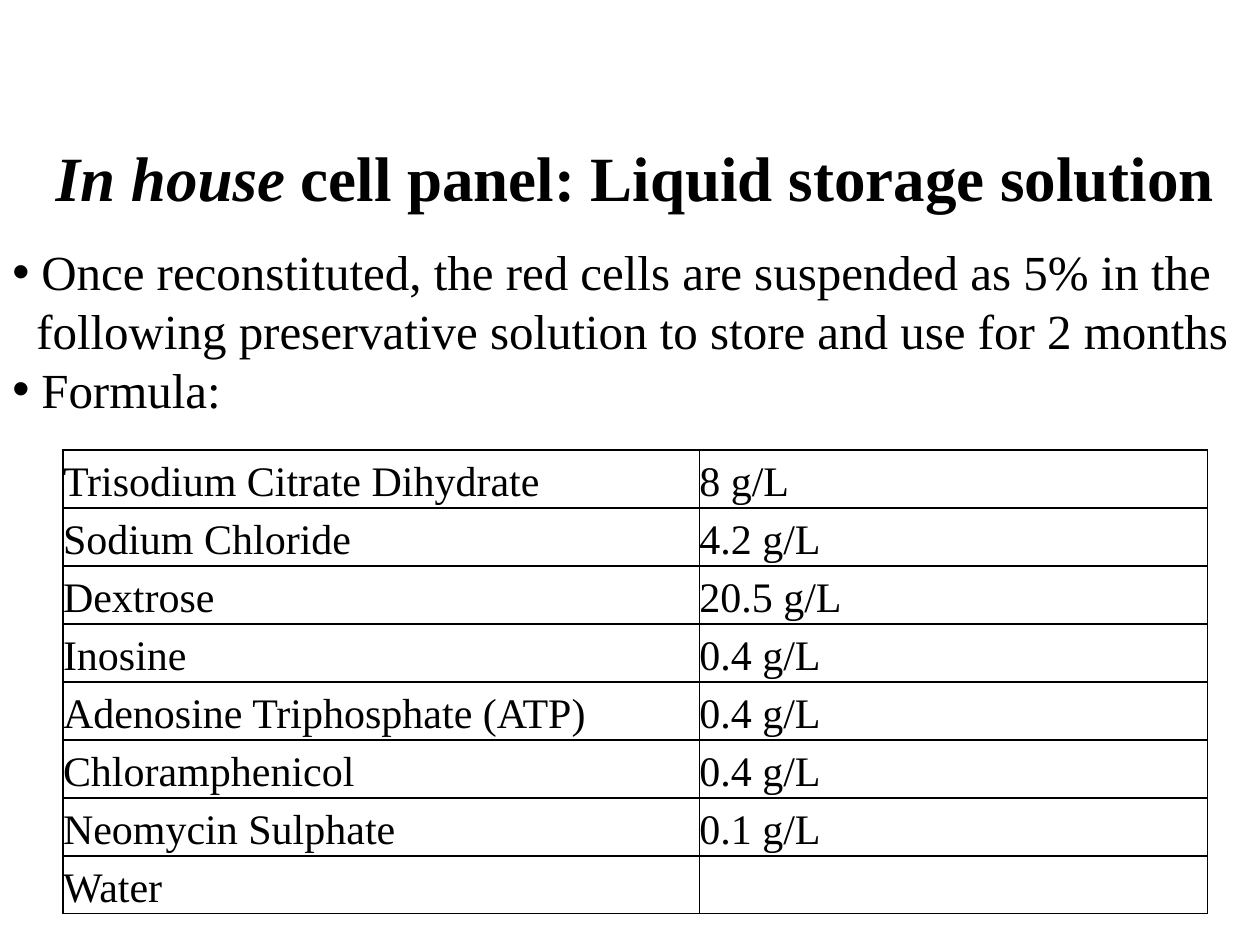
from lxml import etree
from pptx import Presentation
from pptx.dml.color import RGBColor
from pptx.enum.text import MSO_ANCHOR, PP_ALIGN
from pptx.oxml.ns import qn
from pptx.util import Inches, Pt

BLACK = RGBColor(0, 0, 0)
WHITE = RGBColor(255, 255, 255)
MIDDLE = MSO_ANCHOR.MIDDLE
TOP = MSO_ANCHOR.TOP
CENTER = PP_ALIGN.CENTER

FORMULA = [
    ("Trisodium Citrate Dihydrate", "8 g/L"),
    ("Sodium Chloride", "4.2 g/L"),
    ("Dextrose", "20.5 g/L"),
    ("Inosine", "0.4 g/L"),
    ("Adenosine Triphosphate (ATP)", "0.4 g/L"),
    ("Chloramphenicol", "0.4 g/L"),
    ("Neomycin Sulphate", "0.1 g/L"),
    ("Water", ""),
]


class PageBuilder:
    """Style and current page; lengths are in units of a 40 by 30 grid."""

    font = "Times New Roman"
    title_size, body_size, table_size = 36, 28, 24
    hanging, continuation = Inches(0.23), Inches(0.19)

    def __init__(self, deck):
        self.page = deck.slides.add_slide(deck.slide_layouts[6])
        self.unit = deck.slide_width / 40

    def grid(self, *lengths):
        return [round(length * self.unit) for length in lengths]

    def span(self, para, text, size, bold=False, italic=False):
        span = para.add_run()
        span.text = text
        font = span.font
        font.name, font.size = self.font, Pt(size)
        font.bold, font.italic = bold, italic
        font.color.rgb = BLACK

    def text_frame(self, place, anchor):
        frame = self.page.shapes.add_textbox(*self.grid(*place)).text_frame
        frame.word_wrap = True
        frame.vertical_anchor = anchor
        return frame

    def title(self, place, spans):
        para = self.text_frame(place, MIDDLE).paragraphs[0]
        para.alignment = CENTER
        for text, italic in spans:
            self.span(para, text, self.title_size, bold=True, italic=italic)

    def bullets(self, place, lines):
        """Add (text, has_bullet) lines; one without a bullet continues the last."""
        frame = self.text_frame(place, TOP)
        for index, (text, has_bullet) in enumerate(lines):
            para = frame.add_paragraph() if index else frame.paragraphs[0]
            self.span(para, text, self.body_size)
            properties = para._p.get_or_add_pPr()
            if has_bullet:
                properties.set("marL", str(self.hanging))
                properties.set("indent", str(-self.hanging))
                etree.SubElement(properties, qn("a:buFont"), typeface="Arial")
                etree.SubElement(properties, qn("a:buChar"), char="•")
            else:
                properties.set("marL", str(self.continuation))
                properties.set("indent", "0")

    def table(self, left, top, widths, row_height, rows):
        place = self.grid(left, top, sum(widths), row_height * len(rows))
        table = self.page.shapes.add_table(len(rows), len(widths), *place).table
        table.first_row = table.horz_banding = False
        for column, width in zip(table.columns, self.grid(*widths)):
            column.width = width
        for row, texts in zip(table.rows, rows):
            row.height = self.grid(row_height)[0]
            for cell, text in zip(row.cells, texts):
                self.fill_cell(cell, text)

    def fill_cell(self, cell, text):
        cell.margin_left = cell.margin_right = 0
        cell.margin_top = cell.margin_bottom = 0
        cell.vertical_anchor = MIDDLE
        self.cell_borders(cell)
        cell.fill.solid()
        cell.fill.fore_color.rgb = WHITE
        if text:
            para = cell.text_frame.paragraphs[0]
            para.line_spacing = 1.15
            self.span(para, text, self.table_size)

    def cell_borders(self, cell):
        properties = cell._tc.get_or_add_tcPr()
        for side in ("a:lnL", "a:lnR", "a:lnT", "a:lnB"):
            line = etree.SubElement(properties, qn(side), w=str(Pt(1)))
            fill = etree.SubElement(line, qn("a:solidFill"))
            etree.SubElement(fill, qn("a:srgbClr"), val=str(BLACK))


def main():
    deck = Presentation()
    deck.slide_width, deck.slide_height = Inches(10), Inches(7.5)
    builder = PageBuilder(deck)
    builder.title((1, 4.2, 38.32, 2.8), [
        ("In house ", True),
        ("cell panel: Liquid storage solution", False),
    ])
    builder.table(2, 14.28, (20.2, 16.14), 1.64, FORMULA)
    builder.bullets((0, 7.48, 40, 6.04), [
        ("Once reconstituted, the red cells are suspended as 5% in the", True),
        ("following preservative solution to store and use for 2 months", False),
        ("Formula:", True),
    ])
    deck.save("out.pptx")


if __name__ == "__main__":
    main()
